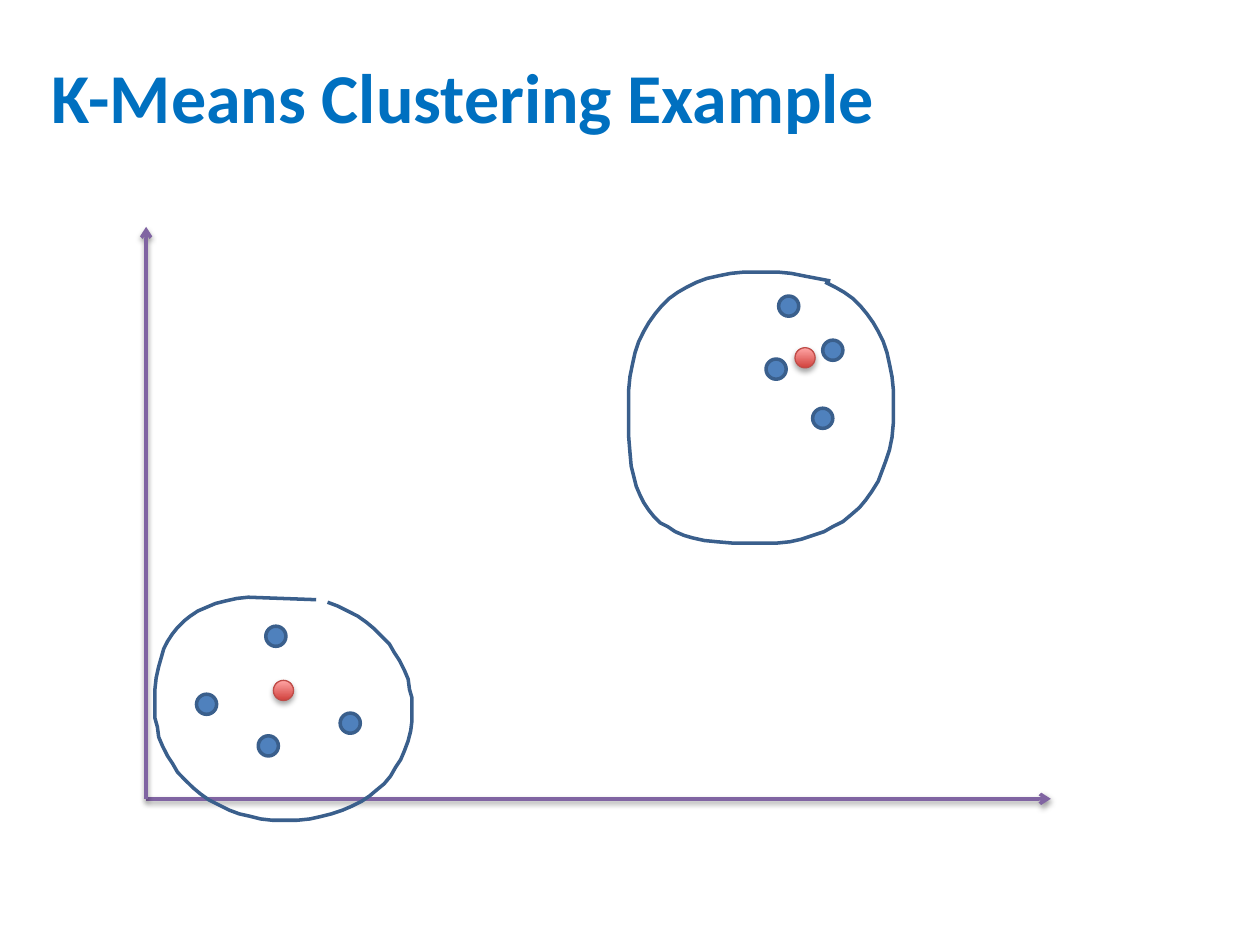
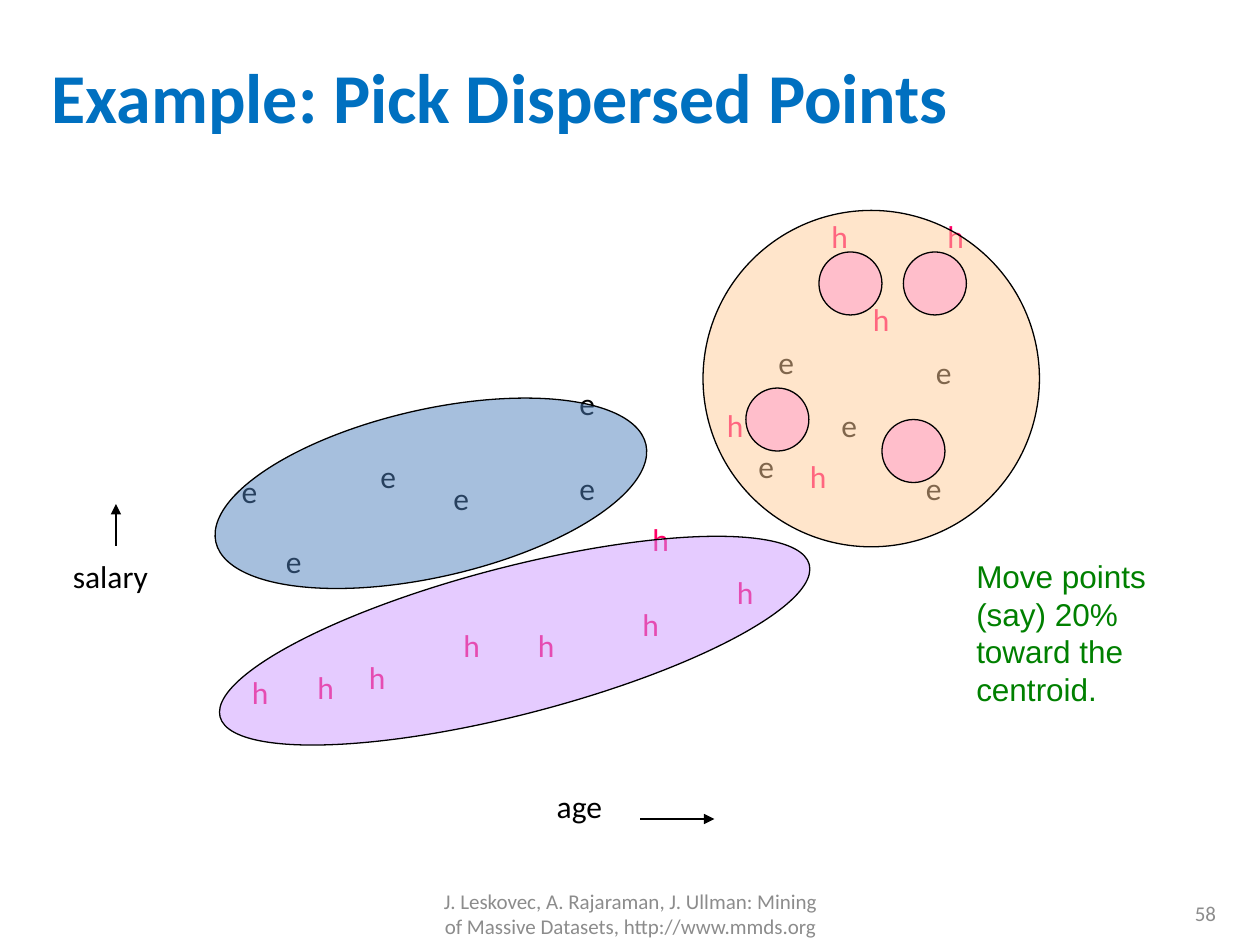
from dataclasses import dataclass
from math import copysign, cos, radians, sin
from typing import Any, NamedTuple, Optional

from lxml.etree import SubElement
from pptx import Presentation
from pptx.dml.color import RGBColor
from pptx.enum.shapes import MSO_CONNECTOR as Link, MSO_SHAPE as Form
from pptx.enum.text import MSO_ANCHOR as Anchor, MSO_AUTO_SIZE as Fit, PP_ALIGN as Align
from pptx.oxml.ns import qn
from pptx.util import Pt

PX = 9144
Spot = tuple[int, int]


@dataclass(frozen=True)
class Theme:
    title: str = "0070C0"
    axis: str = "8064A2"
    dot: str = "4F81BD"
    edge: str = "3A5F8C"
    core_low: str = "D1403C"
    core_high: str = "FFA6A5"
    core_edge: str = "BF4C48"
    ink: str = "000000"
    hot: str = "FF0066"
    peach: str = "FFCC99"
    lilac: str = "CC99FF"
    pink: str = "FF99CC"
    note: str = "008000"
    muted: str = "8C8C8C"
    face: str = "Calibri"
    note_face: str = "Arial"
    title_size: int = 40
    body_size: int = 18
    foot_size: int = 12
    bold_line: float = 2
    thin_line: float = 0.75


THEME = Theme()


class Box(NamedTuple):
    left: int
    top: int
    width: int
    height: int


class Shade(NamedTuple):
    alpha: int
    blur: float
    drop: float


class Oval(NamedTuple):
    box: Box
    fill: str
    edge: str = THEME.ink
    weight: float = THEME.thin_line
    turn: float = 0
    alpha: int = 100
    high: Optional[str] = None
    shade: Optional[Shade] = None


class Arrow(NamedTuple):
    start: Spot
    end: Spot
    color: str = THEME.ink
    weight: float = THEME.thin_line
    head: str = "triangle"
    shade: Optional[Shade] = None


class Label(NamedTuple):
    text: str
    box: Box
    color: str = THEME.ink
    face: str = THEME.face
    size: int = THEME.body_size
    align: Align = Align.LEFT
    anchor: Anchor = Anchor.TOP
    wrap: bool = False
    pitch: Optional[float] = None


class Bulge(NamedTuple):
    top_right: float
    top_left: float
    low_left: float
    low_right: float


class Loop(NamedTuple):
    box: Box
    bulge: Bulge
    tip: Spot
    first: int
    last: int


class Cluster(NamedTuple):
    dots: list[Spot]
    core: Spot
    loop: Loop


class Group(NamedTuple):
    oval: Oval
    marks: dict[str, list[Spot]]


TITLE_BOX = Box(31, 32, 946, 88)
AXIS_SHADE = Shade(38, 3.1, 1.6)
CORE_SHADE = Shade(35, 3.1, 1.8)
ORIGIN = (116, 634)
AXIS_ENDS = [(834, 634), (116, 180)]
DOT = 16
STEP = 5
CLUSTERS = [
    Cluster(
        dots=[(156, 551), (211, 497), (205, 584), (270, 566)],
        core=(217, 540),
        loop=Loop(Box(123, 473, 204, 178), Bulge(2, 2.7, 2, 2.2), (251, 476), 100, 430),
    ),
    Cluster(
        dots=[(645, 324), (618, 235), (653, 270), (608, 285)],
        core=(631, 276),
        loop=Loop(Box(499, 216, 210, 215), Bulge(2.4, 2.4, 3.2, 2.3), (659, 223), 75, 425),
    ),
]

MARK_COLORS = {"e": THEME.ink, "h": THEME.hot}
GROUPS = [
    Group(
        Oval(Box(167, 325, 350, 133), THEME.dot, turn=347.2, alpha=50),
        {"e": [(182, 370), (217, 425), (292, 358), (350, 375), (450, 300), (450, 367)]},
    ),
    Group(
        Oval(Box(558, 167, 267, 267), THEME.peach, alpha=50),
        {
            "e": [(592, 350), (608, 267), (658, 317), (725, 367), (733, 275)],
            "h": [(567, 317), (633, 358), (650, 167), (683, 233), (742, 167)],
        },
    ),
    Group(
        Oval(Box(167, 450, 483, 117), THEME.lilac, turn=345.5, alpha=50),
        {"h": [
            (190, 529), (242, 525), (283, 517), (358, 492),
            (417, 492), (500, 475), (508, 408), (575, 450),
        ]},
    ),
]
MARK = (38, 50)
PICK = 50
PICKS = [(650, 200), (717, 200), (592, 308), (700, 333)]
NAMES = [
    Label("salary", Box(48, 437, 106, 50)),
    Label("age", Box(432, 620, 74, 50)),
]
TRENDS = [Arrow((508, 650), (567, 650)), Arrow((92, 433), (92, 400))]
NOTE = Label(
    "Move points\n(say) 20%\ntoward the\ncentroid.",
    Box(765, 437, 156, 131), THEME.note, THEME.note_face, pitch=21.6,
)
FOOT = Label(
    "J. Leskovec, A. Rajaraman, J. Ullman: Mining of Massive Datasets, http://www.mmds.org",
    Box(342, 705, 317, 40), THEME.muted, size=THEME.foot_size,
    align=Align.CENTER, anchor=Anchor.MIDDLE, wrap=True,
)
PAGE = FOOT._replace(text="58", box=Box(742, 705, 233, 40), align=Align.RIGHT)


def apply(item: Any, values: dict[str, Any]) -> None:
    for name, value in values.items():
        setattr(item, name, value)


def scale(lengths: tuple[int, ...]) -> list[int]:
    return [length * PX for length in lengths]


def rgb(color: str) -> RGBColor:
    return RGBColor.from_string(color)


def ink_line(item: Any, color: str, weight: float) -> None:
    item.line.fill.solid()
    item.line.color.rgb = rgb(color)
    item.line.width = Pt(weight)


def cast(item: Any, shade: Optional[Shade] = None) -> None:
    effects = SubElement(item._element.spPr, qn("a:effectLst"))
    if shade:
        outer = SubElement(
            effects, qn("a:outerShdw"), blurRad=str(Pt(shade.blur)),
            dist=str(Pt(shade.drop)), dir="5400000", rotWithShape="0",
        )
        color = SubElement(outer, qn("a:srgbClr"), val=THEME.ink)
        SubElement(color, qn("a:alpha"), val=str(shade.alpha * 1000))


def draw_oval(slide: Any, oval: Oval) -> None:
    shape = slide.shapes.add_shape(Form.OVAL, *scale(oval.box))
    shape.rotation = oval.turn
    if oval.high:
        shape.fill.gradient()
        shape.fill.gradient_angle = 90
        for stop, color, place in zip(shape.fill.gradient_stops, (oval.fill, oval.high), (0, 1)):
            stop.color.rgb = rgb(color)
            stop.position = place
    else:
        shape.fill.solid()
        shape.fill.fore_color.rgb = rgb(oval.fill)
        if oval.alpha < 100:
            color = shape._element.spPr.find(".//" + qn("a:srgbClr"))
            SubElement(color, qn("a:alpha"), val=str(oval.alpha * 1000))
    ink_line(shape, oval.edge, oval.weight)
    cast(shape, oval.shade)


def draw_arrow(slide: Any, arrow: Arrow) -> None:
    line = slide.shapes.add_connector(Link.STRAIGHT, *scale(arrow.start + arrow.end))
    ink_line(line, arrow.color, arrow.weight)
    SubElement(line._element.spPr.find(qn("a:ln")), qn("a:tailEnd"), type=arrow.head)
    cast(line, arrow.shade)


def bend(ratio: float, bulge: float) -> float:
    return copysign(abs(ratio) ** (2 / bulge), ratio)


def rim_spot(loop: Loop, angle: int) -> Spot:
    box = loop.box
    bulge = loop.bulge[angle % 360 // 90]
    across = bend(cos(radians(angle)), bulge)
    up = bend(sin(radians(angle)), bulge)
    return (
        round(box.left + box.width * (1 + across) / 2),
        round(box.top + box.height * (1 - up) / 2),
    )


def draw_loop(slide: Any, loop: Loop) -> None:
    pen = slide.shapes.build_freeform(*loop.tip, scale=PX)
    angles = range(loop.first, loop.last + STEP, STEP)
    pen.add_line_segments([rim_spot(loop, angle) for angle in angles], close=False)
    shape = pen.convert_to_shape()
    shape.fill.background()
    ink_line(shape, THEME.edge, THEME.bold_line)
    cast(shape)


def draw_label(slide: Any, label: Label) -> None:
    frame = slide.shapes.add_textbox(*scale(label.box)).text_frame
    frame.text = label.text
    apply(frame, {
        "word_wrap": label.wrap,
        "vertical_anchor": label.anchor,
        "auto_size": Fit.NONE if label.wrap else Fit.SHAPE_TO_FIT_TEXT,
    })
    for para in frame.paragraphs:
        para.alignment = label.align
        if label.pitch:
            para.line_spacing = Pt(label.pitch)
        apply(para.runs[0].font, {"name": label.face, "size": Pt(label.size)})
        para.runs[0].font.color.rgb = rgb(label.color)


def add_slide(deck: Any, text: str) -> Any:
    slide = deck.slides.add_slide(deck.slide_layouts[5])
    title = slide.shapes.title
    apply(title, dict(zip(Box._fields, scale(TITLE_BOX))))
    frame = title.text_frame
    frame.text = text
    apply(frame, {"vertical_anchor": Anchor.MIDDLE, "auto_size": Fit.NONE, "word_wrap": True})
    para = frame.paragraphs[0]
    para.alignment = Align.LEFT
    font = para.runs[0].font
    apply(font, {"name": THEME.face, "size": Pt(THEME.title_size), "bold": True})
    font.color.rgb = rgb(THEME.title)
    return slide


def add_means(deck: Any) -> None:
    slide = add_slide(deck, "K-Means Clustering Example")
    for end in AXIS_ENDS:
        draw_arrow(slide, Arrow(ORIGIN, end, THEME.axis, THEME.bold_line, "arrow", AXIS_SHADE))
    for cluster in CLUSTERS:
        for dot in cluster.dots:
            draw_oval(slide, Oval(Box(*dot, DOT, DOT), THEME.dot, THEME.edge, THEME.bold_line))
        core = Box(*cluster.core, DOT, DOT)
        draw_oval(slide, Oval(
            core, THEME.core_low, THEME.core_edge, high=THEME.core_high, shade=CORE_SHADE,
        ))
        draw_loop(slide, cluster.loop)


def add_picks(deck: Any) -> None:
    slide = add_slide(deck, "Example: Pick Dispersed Points")
    for group in GROUPS:
        for mark, spots in group.marks.items():
            for spot in spots:
                draw_label(slide, Label(mark, Box(*spot, *MARK), MARK_COLORS[mark]))
    for trend in TRENDS:
        draw_arrow(slide, trend)
    for group in GROUPS:
        draw_oval(slide, group.oval)
    for pick in PICKS:
        draw_oval(slide, Oval(Box(*pick, PICK, PICK), THEME.pink, alpha=50))
    for label in (*NAMES, NOTE, FOOT, PAGE):
        draw_label(slide, label)


def main() -> None:
    deck = Presentation()
    apply(deck, {"slide_width": 1000 * PX, "slide_height": 750 * PX})
    add_means(deck)
    add_picks(deck)
    deck.save("out.pptx")


if __name__ == "__main__":
    main()
